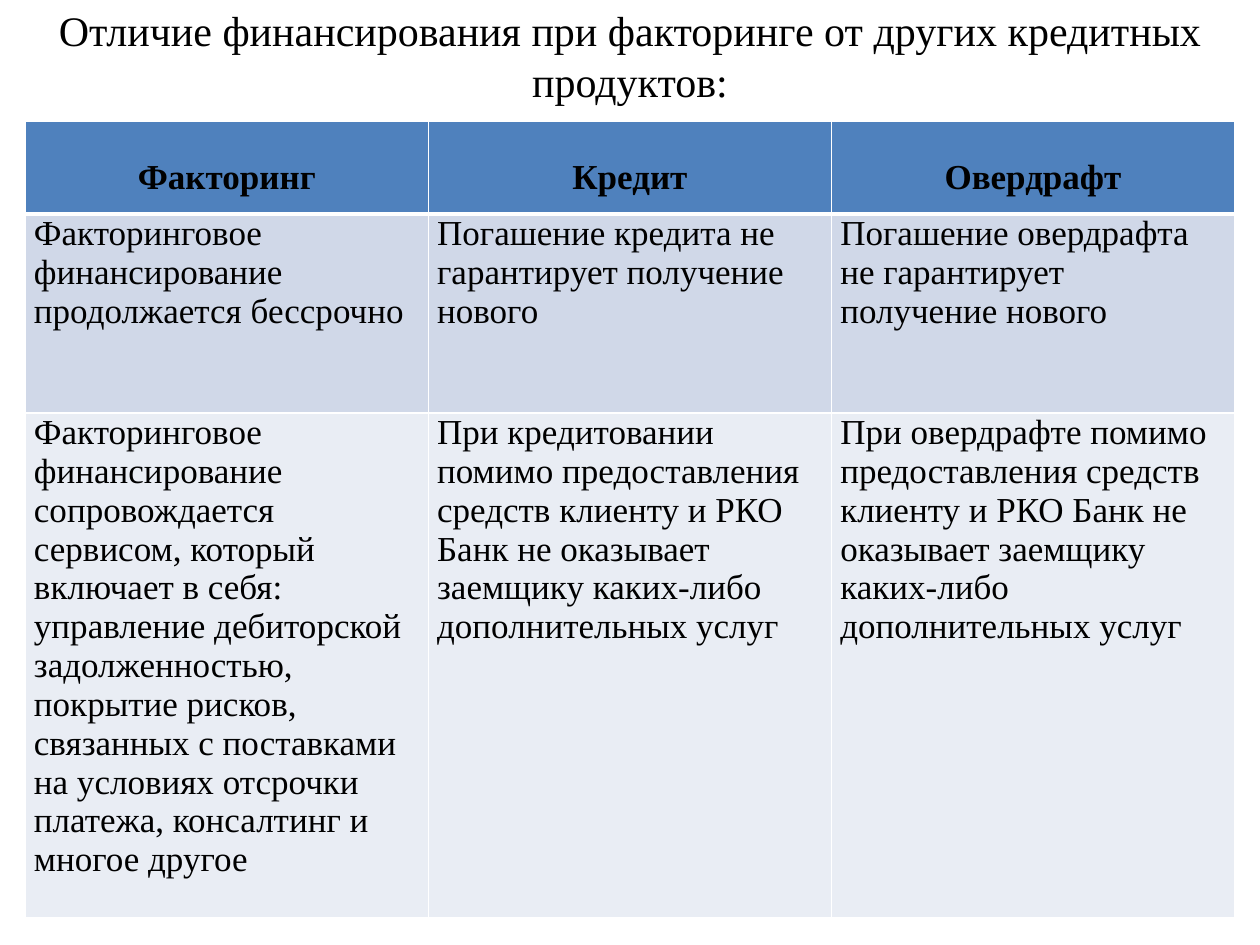
from lxml import etree
from pptx import Presentation
from pptx import util as u
from pptx.dml.color import RGBColor
from pptx.enum import text
from pptx.oxml.ns import qn

# Content
TITLE = "Отличие финансирования при факторинге от других кредитных продуктов:"
ROWS = [
    ("Факторинг", "Кредит", "Овердрафт"),
    (
        "Факторинговое финансирование продолжается бессрочно",
        "Погашение кредита не гарантирует получение нового",
        "Погашение овердрафта не гарантирует получение нового",
    ),
    (
        "Факторинговое финансирование сопровождается сервисом, который "
        "включает в себя: управление дебиторской задолженностью, покрытие "
        "рисков, связанных с поставками на условиях отсрочки платежа, "
        "консалтинг и многое другое",
        "При кредитовании помимо предоставления средств клиенту и РКО Банк "
        "не оказывает заемщику каких-либо дополнительных услуг",
        "При овердрафте помимо предоставления средств клиенту и РКО Банк "
        "не оказывает заемщику каких-либо дополнительных услуг",
    ),
]

# Layout and style
WIDTH, HEIGHT = 10, 7.5
MARGIN = 0.2
CONTENT_WIDTH = WIDTH - 2 * MARGIN
TABLE_TOP = 0.96
ROW_HEIGHTS = (0.74, 1.58, 4)
ROW_FILLS = ("4F81BD", "D0D8E8", "E9EDF4")
FONT = "Times New Roman"
BLACK, WHITE = "000000", "FFFFFF"


def color(value):
    return RGBColor.from_string(value)


def write(paragraph, content, size, bold=False):
    run = paragraph.add_run()
    run.text = content
    run.font.name = FONT
    run.font.size = u.Pt(size)
    run.font.bold = bold
    run.font.color.rgb = color(BLACK)


def set_borders(cell, bottom_width):
    properties = cell._tc.get_or_add_tcPr()
    widths = {"lnL": 1, "lnR": 1, "lnT": 1, "lnB": bottom_width}
    for position, (side, width) in enumerate(widths.items()):
        line = etree.Element(qn(f"a:{side}"), w=str(u.Pt(width)))
        fill = etree.SubElement(line, qn("a:solidFill"))
        etree.SubElement(fill, qn("a:srgbClr"), val=WHITE)
        properties.insert(position, line)


def add_title(slide):
    box = slide.shapes.add_textbox(
        u.Inches(MARGIN), u.Inches(-0.01), u.Inches(CONTENT_WIDTH), u.Inches(0.91)
    )
    frame = box.text_frame
    frame.word_wrap = True
    frame.auto_size = text.MSO_AUTO_SIZE.SHAPE_TO_FIT_TEXT
    paragraph = frame.paragraphs[0]
    paragraph.alignment = text.PP_ALIGN.CENTER
    write(paragraph, TITLE, 24)


def fill_cell(cell, content, fill, is_header):
    cell.fill.solid()
    cell.fill.fore_color.rgb = color(fill)
    cell.margin_left = cell.margin_right = u.Inches(0.07)
    cell.margin_top = cell.margin_bottom = 0
    paragraph = cell.text_frame.paragraphs[0]
    if is_header:
        cell.vertical_anchor = text.MSO_ANCHOR.MIDDLE
        paragraph.alignment = text.PP_ALIGN.CENTER
        paragraph.line_spacing = 1.5
    write(paragraph, content, 20, bold=is_header)
    set_borders(cell, 3 if is_header else 1)


def add_comparison(slide):
    columns = len(ROWS[0])
    table = slide.shapes.add_table(
        len(ROWS), columns, u.Inches(MARGIN), u.Inches(TABLE_TOP),
        u.Inches(CONTENT_WIDTH), u.Inches(sum(ROW_HEIGHTS)),
    ).table
    for column in table.columns:
        column.width = u.Inches(CONTENT_WIDTH / columns)
    for index, (row, height, fill) in enumerate(zip(ROWS, ROW_HEIGHTS, ROW_FILLS)):
        table.rows[index].height = u.Inches(height)
        for cell, content in zip(table.rows[index].cells, row):
            fill_cell(cell, content, fill, is_header=index == 0)


def main():
    presentation = Presentation()
    presentation.slide_width = u.Inches(WIDTH)
    presentation.slide_height = u.Inches(HEIGHT)
    slide = presentation.slides.add_slide(presentation.slide_layouts[6])
    add_title(slide)
    add_comparison(slide)
    presentation.save("out.pptx")


if __name__ == "__main__":
    main()
